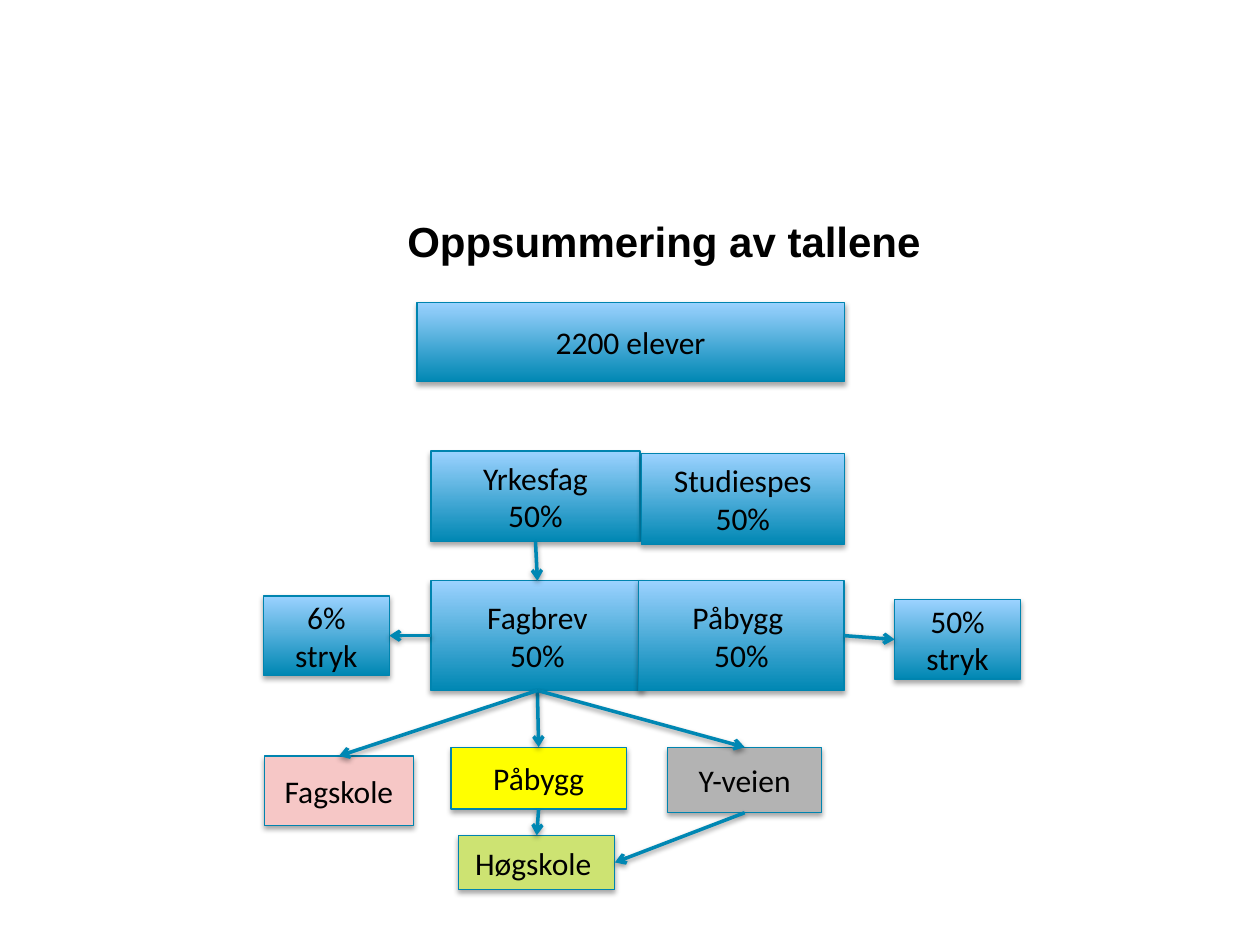
from dataclasses import dataclass

from lxml import etree
from pptx import Presentation
from pptx.dml.color import RGBColor
from pptx.enum.shapes import MSO_CONNECTOR, MSO_SHAPE
from pptx.enum.text import MSO_ANCHOR, PP_ALIGN
from pptx.oxml.ns import qn
from pptx.shapes.autoshape import Shape
from pptx.shapes.connector import Connector
from pptx.slide import Slide
from pptx.util import Inches, Pt

RECTANGLE = MSO_SHAPE.RECTANGLE
STRAIGHT = MSO_CONNECTOR.STRAIGHT
MIDDLE = MSO_ANCHOR.MIDDLE
CENTER = PP_ALIGN.CENTER
TITLE_ONLY = 5
TOP, LEFT, BOTTOM, RIGHT = range(4)  # connection sites of a rectangle


@dataclass(frozen=True)
class Theme:
    text: str = "000000"
    border: str = "0084AF"
    arrow: str = "0087B3"
    gradient: tuple[str, str] = ("0087B3", "9BD2FF")
    yellow: str = "FFFF00"
    green: str = "CDE372"
    grey: str = "B3B3B3"
    pink: str = "F6C7C6"
    title_font: str = "Arial"
    body_font: str = "Calibri"
    title_size: float = 24
    body_size: float = 18
    border_width: float = 0.75
    arrow_width: float = 2


THEME = Theme()


@dataclass(frozen=True)
class Box:
    name: str
    text: str
    left: float
    top: float
    width: float
    height: float
    fill: str | None = None  # None gives the blue gradient


@dataclass(frozen=True)
class Arrow:
    start: str
    start_site: int
    end: str
    end_site: int


BOXES = (
    Box("students", "2200 elever", 3.31, 2.4, 3.39, 0.63),
    Box("vocational", "Yrkesfag\n50%", 3.42, 3.58, 1.66, 0.72),
    Box("academic", "Studiespes\n50%", 5.09, 3.6, 1.61, 0.72),
    Box("certificate", "Fagbrev\n50%", 3.42, 4.61, 1.69, 0.87),
    Box("supplement", "Påbygg \n50%", 5.07, 4.61, 1.63, 0.87),
    Box("supplement fail", "50% stryk", 7.1, 4.76, 1, 0.63),
    Box("certificate fail", "6% stryk", 2.09, 4.73, 1, 0.63),
    Box("later supplement", "Påbygg", 3.58, 5.93, 1.39, 0.49, THEME.yellow),
    Box("college", "Høgskole ", 3.64, 6.63, 1.24, 0.43, THEME.green),
    Box("y-route", "Y-veien", 5.3, 5.93, 1.22, 0.52, THEME.grey),
    Box("trade school", "Fagskole", 2.1, 6, 1.18, 0.55, THEME.pink),
)

ARROWS = (
    Arrow("supplement", RIGHT, "supplement fail", LEFT),
    Arrow("certificate", LEFT, "certificate fail", RIGHT),
    Arrow("vocational", BOTTOM, "certificate", TOP),
    Arrow("certificate", BOTTOM, "later supplement", TOP),
    Arrow("later supplement", BOTTOM, "college", TOP),
    Arrow("certificate", BOTTOM, "y-route", TOP),
    Arrow("y-route", BOTTOM, "college", RIGHT),
    Arrow("certificate", BOTTOM, "trade school", TOP),
)


def rgb(color: str) -> RGBColor:
    return RGBColor.from_string(color)


def format_text(shape: Shape, font: str, size: float, bold: bool = False) -> None:
    frame = shape.text_frame
    frame.word_wrap = True
    frame.vertical_anchor = MIDDLE
    for para in frame.paragraphs:
        para.alignment = CENTER
        for span in para.runs:
            span.font.name = font
            span.font.size = Pt(size)
            span.font.bold = bold
            span.font.color.rgb = rgb(THEME.text)


def add_shadow(shape: Shape | Connector, distance: float, opacity: int) -> None:
    """Cast a soft black shadow straight down; call after the line is set."""
    properties = shape._element.spPr
    effects = properties.find(qn("a:effectLst"))
    if effects is None:
        effects = etree.SubElement(properties, qn("a:effectLst"))
    shadow = etree.SubElement(
        effects, qn("a:outerShdw"), blurRad=str(Pt(3.1)), dist=str(Pt(distance)),
        dir="5400000", rotWithShape="0")
    color = etree.SubElement(shadow, qn("a:srgbClr"), val="000000")
    etree.SubElement(color, qn("a:alpha"), val=str(opacity * 1000))


def add_title(page: Slide, text: str) -> None:
    title = page.shapes.title
    title.left, title.top = Inches(1.01), Inches(1.66)
    title.width, title.height = Inches(8.52), Inches(0.5)
    title.text_frame.text = text
    format_text(title, THEME.title_font, THEME.title_size, bold=True)


def add_box(page: Slide, box: Box) -> Shape:
    shape = page.shapes.add_shape(
        RECTANGLE, Inches(box.left), Inches(box.top),
        Inches(box.width), Inches(box.height))
    if box.fill:
        shape.fill.solid()
        shape.fill.fore_color.rgb = rgb(box.fill)
    else:
        shape.fill.gradient()
        shape.fill.gradient_angle = 90
        for stop, color in zip(shape.fill.gradient_stops, THEME.gradient):
            stop.color.rgb = rgb(color)
    shape.line.color.rgb = rgb(THEME.border)
    shape.line.width = Pt(THEME.border_width)
    shape.shadow.inherit = False
    add_shadow(shape, distance=1.8, opacity=35)
    shape.text_frame.text = box.text
    format_text(shape, THEME.body_font, THEME.body_size)
    return shape


def add_arrow(page: Slide, arrow: Arrow, shapes: dict[str, Shape]) -> None:
    connector = page.shapes.add_connector(STRAIGHT, 0, 0, 0, 0)
    connector.begin_connect(shapes[arrow.start], arrow.start_site)
    connector.end_connect(shapes[arrow.end], arrow.end_site)
    connector.line.color.rgb = rgb(THEME.arrow)
    connector.line.width = Pt(THEME.arrow_width)
    etree.SubElement(connector.line._get_or_add_ln(), qn("a:tailEnd"), type="arrow")
    add_shadow(connector, distance=1.6, opacity=38)


def main() -> None:
    deck = Presentation()
    deck.slide_width, deck.slide_height = Inches(10), Inches(7.5)
    page = deck.slides.add_slide(deck.slide_layouts[TITLE_ONLY])
    add_title(page, "Oppsummering av tallene")
    shapes = {box.name: add_box(page, box) for box in BOXES}
    for arrow in ARROWS:
        add_arrow(page, arrow, shapes)
    deck.save("out.pptx")


if __name__ == "__main__":
    main()
